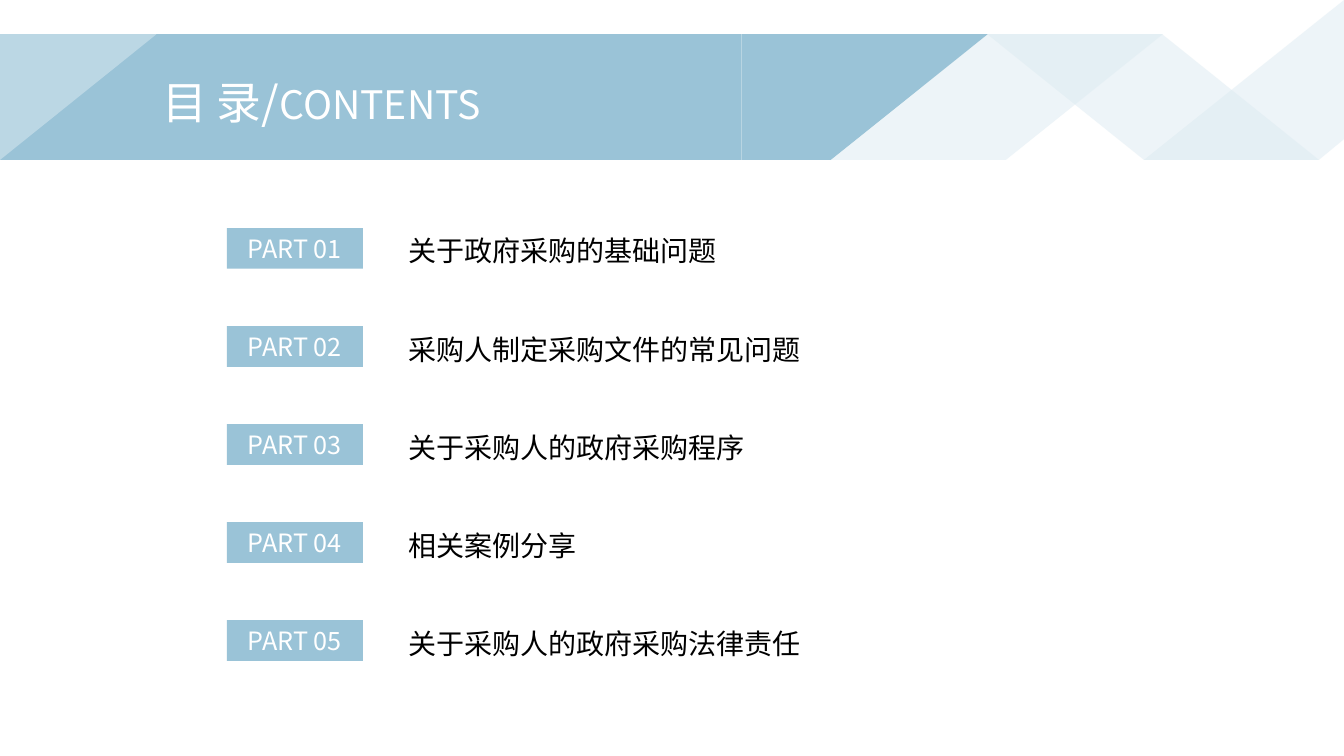
import pptx
import pptx.util
import pptx.dml.color
import pptx.enum.shapes
import pptx.enum.text
import pptx.oxml.ns
from lxml import etree

Pt = pptx.util.Pt
qn = pptx.oxml.ns.qn


def color(hex_string):
    return pptx.dml.color.RGBColor.from_string(hex_string)


class ContentsSlide:
    font_name = "Noto Sans CJK SC"
    blue = "9AC3D7"
    pale = "DDEBF2"
    white = "FFFFFF"
    black = "000000"

    def __init__(self, presentation):
        self.slide = presentation.slides.add_slide(presentation.slide_layouts[6])

    def paint(self, shape, fill, opacity=100):
        shape.shadow.inherit = False
        shape.line.fill.background()
        shape.fill.solid()
        shape.fill.fore_color.rgb = color(fill)
        if opacity < 100:
            fill_color = shape._element.spPr.find(qn("a:solidFill"))[0]
            alpha = etree.SubElement(fill_color, qn("a:alpha"))
            alpha.set("val", str(opacity * 1000))

    def set_text(self, shape, runs, font_color, wrap=True):
        frame = shape.text_frame
        frame.word_wrap = wrap
        frame.auto_size = pptx.enum.text.MSO_AUTO_SIZE.SHAPE_TO_FIT_TEXT
        paragraph = frame.paragraphs[0]
        paragraph.font.name = self.font_name
        paragraph.font.color.rgb = color(font_color)
        if len(runs) == 1:
            paragraph.font.size = Pt(runs[0][1])
        properties = paragraph._p.get_or_add_pPr().find(qn("a:defRPr"))
        etree.SubElement(properties, qn("a:ea")).set("typeface", self.font_name)
        for text, size in runs:
            run = paragraph.add_run()
            run.text = text
            if len(runs) > 1:
                run.font.size = Pt(size)
        return paragraph

    def rectangle(self, left, top, width, height):
        shape = self.slide.shapes.add_shape(
            pptx.enum.shapes.MSO_SHAPE.RECTANGLE,
            Pt(left), Pt(top), Pt(width), Pt(height))
        self.paint(shape, self.blue)
        return shape

    def polygon(self, points, fill, opacity=100):
        start, *others = [(Pt(x), Pt(y)) for x, y in points]
        builder = self.slide.shapes.build_freeform(*start)
        builder.add_line_segments(others, close=True)
        self.paint(builder.convert_to_shape(), fill, opacity)

    def badge(self, left, top, width, height, text):
        shape = self.rectangle(left, top, width, height)
        paragraph = self.set_text(shape, [(text, 18)], self.white)
        paragraph.alignment = pptx.enum.text.PP_ALIGN.CENTER
        shape.text_frame.vertical_anchor = pptx.enum.text.MSO_ANCHOR.MIDDLE

    def text(self, left, top, width, height, runs, font_color, wrap=True):
        box = self.slide.shapes.add_textbox(Pt(left), Pt(top), Pt(width), Pt(height))
        self.set_text(box, runs, font_color, wrap)


def main():
    presentation = pptx.Presentation()
    presentation.slide_width = Pt(960)
    presentation.slide_height = Pt(540)
    contents = ContentsSlide(presentation)

    top, bottom = 24.5, 114.3
    contents.rectangle(0, top, 529.5, bottom - top)
    contents.polygon(
        [(529.5, top), (705.6, top), (593.5, bottom), (529.5, bottom)], contents.blue)
    pale_shapes = [
        [(960, 0), (960, 99.5), (942, bottom), (817, bottom)],
        [(705.2, top), (830.2, top), (942.2, bottom), (817.2, bottom)],
        [(705.6, top), (830.6, top), (718.5, bottom), (593.5, bottom)],
        [(0, top), (111.8, top), (0, bottom)],
    ]
    for points in pale_shapes:
        contents.polygon(points, contents.pale, 50)

    contents.text(108.7, 49.7, 255.6, 46, [("目 录/", 32), ("CONTENTS", 28)],
                  contents.white, wrap=False)

    parts = [
        ("关于政府采购的基础问题", 342),
        ("采购人制定采购文件的常见问题", 377),
        ("关于采购人的政府采购程序", 342),
        ("相关案例分享", 342),
        ("关于采购人的政府采购法律责任", 377),
    ]
    for index, (topic, width) in enumerate(parts):
        contents.badge(162, 163 + 70 * index, 97.2, 29, f"PART {index + 1:02}")
        contents.text(284.4, 163.5 + 70.2 * index, width, 31.7, [(topic, 20)],
                      contents.black)

    presentation.save("out.pptx")


if __name__ == "__main__":
    main()
